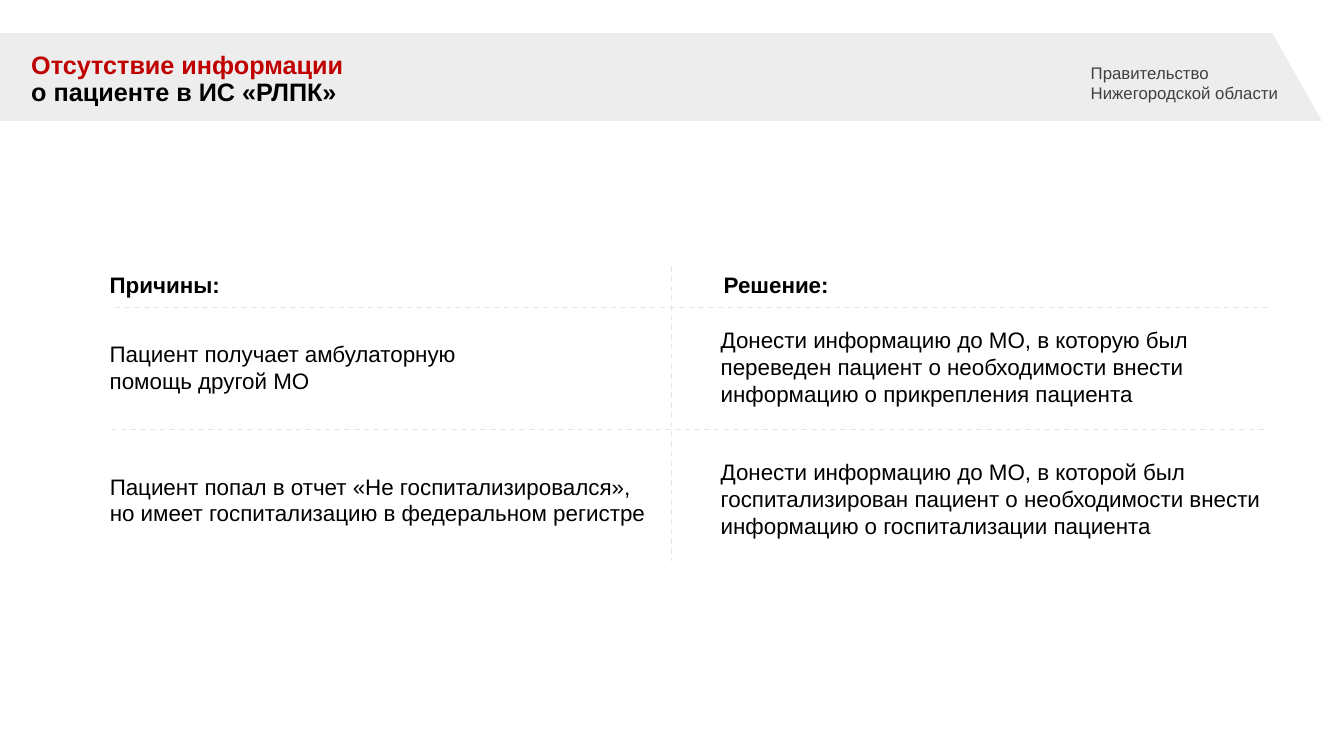
from dataclasses import dataclass

from lxml import etree
from pptx import Presentation
from pptx.dml.color import RGBColor
from pptx.enum.dml import MSO_LINE
from pptx.enum.shapes import MSO_CONNECTOR
from pptx.enum.text import MSO_ANCHOR, MSO_AUTO_SIZE, PP_ALIGN
from pptx.oxml.ns import qn
from pptx.util import Pt

PX = 9144  # EMU per px, 100 px to the inch
TITLE_ONLY = 5
LEFT = PP_ALIGN.LEFT
TOP = MSO_ANCHOR.TOP
NO_FIT = MSO_AUTO_SIZE.NONE
STRAIGHT = MSO_CONNECTOR.STRAIGHT
DASH = MSO_LINE.DASH
COLORS = {
    "accent": "C00000",
    "text": "000000",
    "agency": "404040",
    "band": "D9D9D9",
    "divider": "E7E6E6",
}
FRAME_FORMAT = {"word_wrap": True, "auto_size": NO_FIT, "vertical_anchor": TOP}


@dataclass
class Line:
    text: str
    color: str = "text"


@dataclass
class Label:
    x: int
    y: int
    width: int
    height: int
    lines: list[Line]
    size: int = 16
    bold: bool = False
    spacing: float = 1.0


@dataclass
class Divider:
    x1: int
    y1: int
    x2: int
    y2: int


CAUSE_X = 99
TITLE = Label(21, 47, 695, 65, [Line("Отсутствие информации", "accent"),
                                Line("о пациенте в ИС «РЛПК»")], 18, True, 0.9)
LABELS = [
    Label(1072, 57, 213, 49, [Line("Правительство Нижегородской области", "agency")], 12),
    # Column headings
    Label(CAUSE_X, 264, 287, 37, [Line("Причины:")], bold=True),
    Label(708, 264, 287, 37, [Line("Решение:")], bold=True),
    # Patient treated elsewhere
    Label(CAUSE_X, 333, 384, 64, [Line("Пациент получает амбулаторную помощь другой МО")]),
    Label(705, 319, 570, 91, [Line("Донести информацию до МО, в которую был переведен пациент "
                                   "о необходимости внести информацию о прикрепления пациента")]),
    # Patient reported as not hospitalised
    Label(CAUSE_X, 464, 579, 64, [Line("Пациент попал в отчет «Не госпитализировался»,"),
                                  Line("но имеет госпитализацию в федеральном регистре")]),
    Label(705, 450, 616, 91, [Line("Донести информацию до МО, в которой был госпитализирован пациент "
                                   "о необходимости внести информацию о госпитализации пациента")]),
]
DIVIDERS = [
    Divider(110, 426, 1256, 426),
    Divider(114, 305, 1260, 305),
    Divider(666, 264, 666, 557),
]
BAND_OUTLINE = [(1311, 120), (1262, 33), (-1, 33), (0, 120)]


def rgb(name: str) -> RGBColor:
    return RGBColor.from_string(COLORS[name])


def write_label(shape, label: Label) -> None:
    frame = shape.text_frame
    for name, value in FRAME_FORMAT.items():
        setattr(frame, name, value)
    paragraph = frame.paragraphs[0]
    paragraph.alignment = LEFT
    paragraph.line_spacing = label.spacing
    for index, line in enumerate(label.lines):
        if index:
            paragraph.add_line_break()
        run = paragraph.add_run()
        run.text = line.text
        font_format = {"name": "Arial", "size": Pt(label.size), "bold": label.bold}
        for name, value in font_format.items():
            setattr(run.font, name, value)
        run.font.color.rgb = rgb(line.color)


def place_title(slide, label: Label) -> None:
    title = slide.shapes.title
    for name in ("width", "height"):
        setattr(title, name, getattr(label, name) * PX)
    title.left, title.top = label.x * PX, label.y * PX
    write_label(title, label)


def add_label(slide, label: Label) -> None:
    box = slide.shapes.add_textbox(label.x * PX, label.y * PX,
                                   label.width * PX, label.height * PX)
    write_label(box, label)


def add_band(slide) -> None:
    start, *rest = BAND_OUTLINE
    builder = slide.shapes.build_freeform(*start, scale=PX)
    builder.add_line_segments(rest, close=True)
    band = builder.convert_to_shape()
    band.shadow.inherit = False
    band.fill.solid()
    band.fill.fore_color.rgb = rgb("band")
    band.line.fill.background()
    color = next(band.element.iter(qn("a:srgbClr")))
    etree.SubElement(color, qn("a:alpha"), val="45000")
    # Keep the band behind the title
    slide.shapes.title.element.addprevious(band.element)


def add_divider(slide, divider: Divider) -> None:
    connector = slide.shapes.add_connector(
        STRAIGHT, divider.x1 * PX, divider.y1 * PX, divider.x2 * PX, divider.y2 * PX)
    connector.line.color.rgb = rgb("divider")
    connector.line.width = Pt(1)
    connector.line.dash_style = DASH
    etree.SubElement(connector.element.spPr, qn("a:effectLst"))


def main() -> None:
    deck = Presentation()
    deck.slide_width, deck.slide_height = 1333 * PX, 750 * PX
    slide = deck.slides.add_slide(deck.slide_layouts[TITLE_ONLY])

    # Header
    add_band(slide)
    place_title(slide, TITLE)

    # Causes and solutions
    for label in LABELS:
        add_label(slide, label)
    for divider in DIVIDERS:
        add_divider(slide, divider)

    deck.save("out.pptx")


if __name__ == "__main__":
    main()
